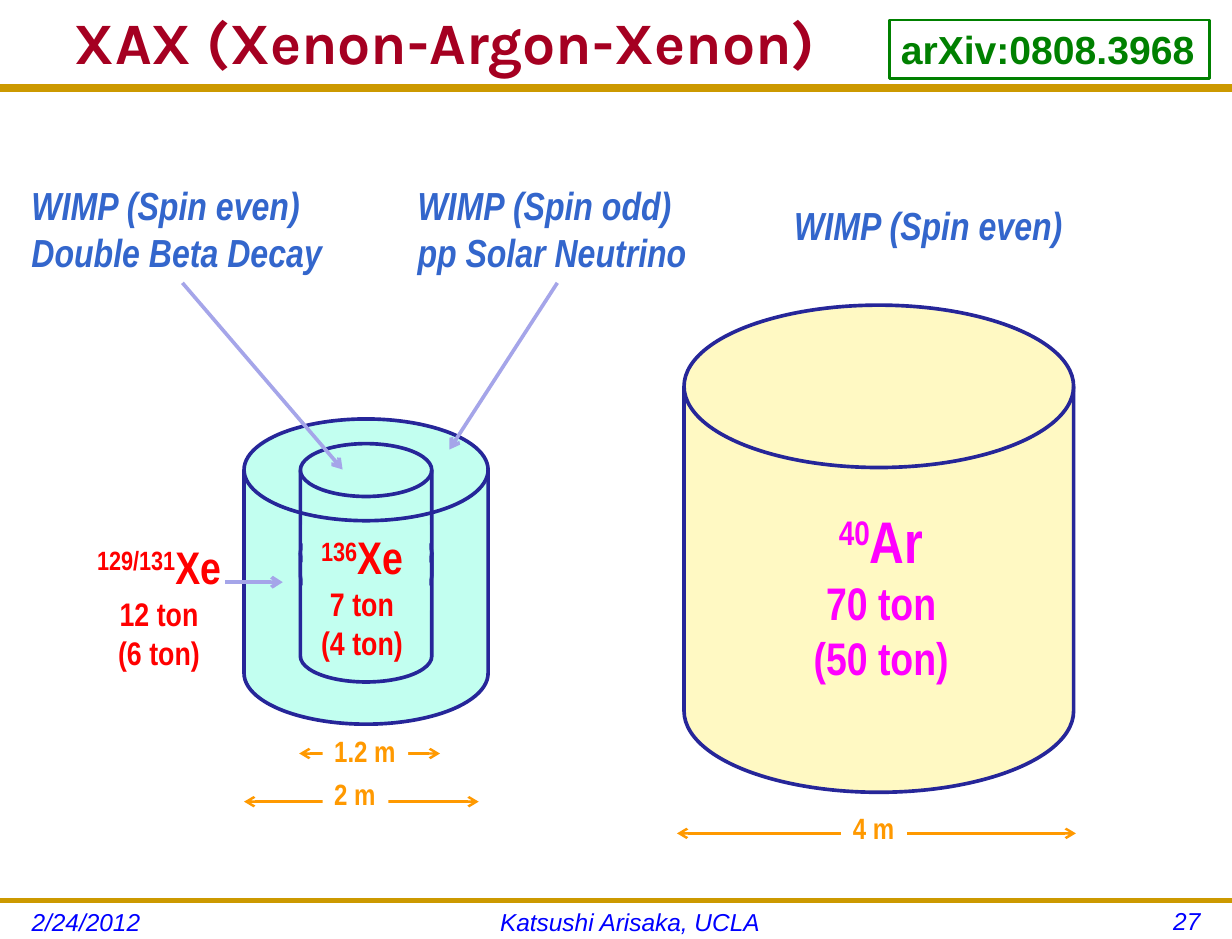
from dataclasses import dataclass
from typing import Optional

from lxml.etree import SubElement
from pptx import Presentation
from pptx.dml.color import RGBColor
from pptx.enum.shapes import MSO_CONNECTOR as Connector, MSO_SHAPE as Preset
from pptx.enum.text import MSO_ANCHOR as Anchor, MSO_AUTO_SIZE as AutoSize, PP_ALIGN as Align
from pptx.oxml.ns import qn
from pptx.util import Emu, Pt

EMU_PER_PX = 9144


@dataclass(frozen=True)
class Theme:
    title: str = "A50021"
    rule: str = "CC9900"
    footer: str = "0000FF"
    reference: str = "008000"
    physics: str = "3366CC"
    dimension: str = "FF9900"
    xenon: str = "FF0000"
    argon: str = "FF00FF"
    outline: str = "262699"
    pointer: str = "A5A5E9"
    xenon_fill: str = "C2FFF0"
    argon_fill: str = "FFF9C3"
    white: str = "FFFFFF"
    heading_font: str = "Karla"
    body_font: str = "Arial"
    label_font: str = "Arial Narrow"
    huge: int = 36
    large: int = 28
    medium: int = 24
    small: int = 20
    dimension_size: int = 18
    footer_size: int = 15


THEME = Theme()


@dataclass(frozen=True)
class Box:
    left: int
    top: int
    width: int
    height: int

    def emu(self) -> tuple:
        return tuple(px(value) for value in (self.left, self.top, self.width, self.height))


@dataclass(frozen=True)
class Line:
    text: str
    size: int
    superscript: str = ""


@dataclass(frozen=True)
class Label:
    box: Box
    lines: tuple
    color: str
    font: str = THEME.label_font
    bold: bool = True
    italic: bool = False
    align: Align = Align.LEFT
    fill: Optional[str] = None
    border: Optional[str] = None
    wrap: bool = False
    grow: bool = True


@dataclass(frozen=True)
class Cylinder:
    box: Box
    fill: Optional[str] = None


@dataclass(frozen=True)
class Dimension:
    left: int
    right: int
    y: int
    text: str
    box: Box


def px(value: int) -> Emu:
    return Emu(value * EMU_PER_PX)


def style_font(font, name: str, size: int, color: str, bold: bool, italic: bool = False) -> None:
    font.name, font.size, font.bold, font.italic = name, Pt(size), bold, italic
    font.color.rgb = RGBColor.from_string(color)


def add_preset(slide, preset, box: Box, fill: Optional[str], border: Optional[str], width: float = 2.25):
    shape = slide.shapes.add_shape(preset, *box.emu())
    shape.shadow.inherit = False
    if fill:
        shape.fill.solid()
        shape.fill.fore_color.rgb = RGBColor.from_string(fill)
    else:
        shape.fill.background()
    if border:
        shape.line.color.rgb = RGBColor.from_string(border)
        shape.line.width = Pt(width)
    else:
        shape.line.fill.background()
    return shape


def add_label(slide, label: Label):
    if label.fill or label.border:
        shape = add_preset(slide, Preset.RECTANGLE, label.box, label.fill, label.border, 1.5)
    else:
        shape = slide.shapes.add_textbox(*label.box.emu())
    frame = shape.text_frame
    frame.word_wrap = label.wrap
    frame.auto_size = AutoSize.SHAPE_TO_FIT_TEXT if label.grow else AutoSize.NONE
    frame.vertical_anchor = Anchor.TOP
    for index, line in enumerate(label.lines):
        paragraph = frame.add_paragraph() if index else frame.paragraphs[0]
        paragraph.alignment = label.align
        if line.superscript:
            raised = paragraph.add_run()
            raised.text = line.superscript
            raised._r.get_or_add_rPr().set("baseline", "30000")
            paragraph.add_run().text = line.text
        else:
            paragraph.text = line.text
        for run in paragraph.runs:
            style_font(run.font, label.font, line.size, label.color, label.bold, label.italic)
    return shape


def add_line(slide, start: tuple, end: tuple, color: str, width: float, ends: tuple = ()):
    points = (px(value) for value in start + end)
    connector = slide.shapes.add_connector(Connector.STRAIGHT, *points)
    connector.line.color.rgb = RGBColor.from_string(color)
    connector.line.width = Pt(width)
    outline = connector.line._get_or_add_ln()
    for tag in ends:
        SubElement(outline, qn(tag), type="arrow")
    SubElement(connector._element.spPr, qn("a:effectLst"))
    return connector


def add_dimension(slide, dimension: Dimension) -> None:
    add_line(slide, (dimension.left, dimension.y), (dimension.right, dimension.y),
             THEME.dimension, 1.5, ("a:headEnd", "a:tailEnd"))
    add_label(slide, Label(dimension.box, (Line(dimension.text, THEME.dimension_size),),
                           THEME.dimension, fill=THEME.white))


def add_pointer(slide, start: tuple, end: tuple, source=None) -> None:
    connector = add_line(slide, start, end, THEME.pointer, 2.25, ("a:tailEnd",))
    if source is not None:
        connector.begin_connect(source, 2)


def add_title(slide, text: str, box: Box) -> None:
    title = slide.shapes.title
    title.left, title.top, title.width, title.height = box.emu()
    title.text_frame.text = text
    title.text_frame.vertical_anchor = Anchor.MIDDLE
    paragraph = title.text_frame.paragraphs[0]
    paragraph.alignment, paragraph.line_spacing = Align.CENTER, 0.8
    style_font(paragraph.runs[0].font, THEME.heading_font, THEME.huge, THEME.title, True)


def physics_label(box: Box, *texts: str, wrap: bool = False) -> Label:
    lines = tuple(Line(text, THEME.medium) for text in texts)
    return Label(box, lines, THEME.physics, italic=True, wrap=wrap)


def isotope_label(box: Box, number: str, symbol: str, masses: tuple, color: str, sizes: tuple) -> Label:
    lines = (Line(symbol, sizes[0], number),) + tuple(Line(mass, sizes[1]) for mass in masses)
    return Label(box, lines, color, align=Align.CENTER)


def main() -> None:
    presentation = Presentation()
    presentation.slide_width, presentation.slide_height = px(1050), px(800)
    slide = presentation.slides.add_slide(presentation.slide_layouts[5])

    for y, width in ((75, 4.5), (767, 3)):
        add_line(slide, (0, y), (1050, y), THEME.rule, width)
    add_title(slide, "XAX (Xenon-Argon-Xenon)", Box(9, 3, 741, 75))
    add_label(slide, Label(Box(758, 17, 273, 50), (Line("arXiv:0808.3968", THEME.medium),),
                           THEME.reference, THEME.body_font, border=THEME.reference))
    for text, box, align in (("2/24/2012", Box(17, 768, 208, 32), Align.LEFT),
                             ("Katsushi Arisaka, UCLA", Box(233, 768, 608, 32), Align.CENTER),
                             ("27", Box(850, 767, 183, 33), Align.RIGHT)):
        add_label(slide, Label(box, (Line(text, THEME.footer_size),), THEME.footer, THEME.body_font,
                               bold=False, italic=True, align=align, wrap=True, grow=False))

    for cylinder in (Cylinder(Box(583, 260, 332, 415), THEME.argon_fill),
                     Cylinder(Box(208, 357, 208, 260), THEME.xenon_fill),
                     Cylinder(Box(256, 378, 112, 135)),
                     Cylinder(Box(256, 449, 112, 132))):
        add_preset(slide, Preset.FLOWCHART_MAGNETIC_DISK, cylinder.box, cylinder.fill, THEME.outline)
    add_preset(slide, Preset.RECTANGLE, Box(258, 447, 108, 73), THEME.xenon_fill, None)

    for dimension in (Dimension(577, 917, 710, "4 m", Box(717, 685, 56, 40)),
                      Dimension(208, 408, 683, "2 m", Box(275, 656, 56, 40)),
                      Dimension(255, 375, 642, "1.2 m", Box(275, 620, 73, 40))):
        add_dimension(slide, dimension)

    xenon_sizes = (THEME.large, THEME.small)
    for label in (
        isotope_label(Box(67, 454, 137, 125), "129/131", "Xe", ("12 ton", "(6 ton)"), THEME.xenon, xenon_sizes),
        isotope_label(Box(261, 446, 95, 125), "136", "Xe", ("7 ton", "(4 ton)"), THEME.xenon, xenon_sizes),
        isotope_label(Box(683, 425, 136, 165), "40", "Ar", ("70 ton", "(50 ton)"), THEME.argon,
                      (THEME.huge, THEME.large)),
        physics_label(Box(667, 167, 292, 50), "WIMP (Spin even)", wrap=True),
    ):
        add_label(slide, label)

    spin_odd = add_label(slide, physics_label(Box(346, 150, 258, 91), "WIMP (Spin odd)", "pp Solar Neutrino"))
    spin_even = add_label(slide, physics_label(Box(17, 150, 277, 91), "WIMP (Spin even)", "Double Beta Decay"))
    add_pointer(slide, (192, 496), (241, 496))
    add_pointer(slide, (475, 241), (383, 383), spin_odd)
    add_pointer(slide, (155, 241), (292, 400), spin_even)

    presentation.save("out.pptx")


if __name__ == "__main__":
    main()
